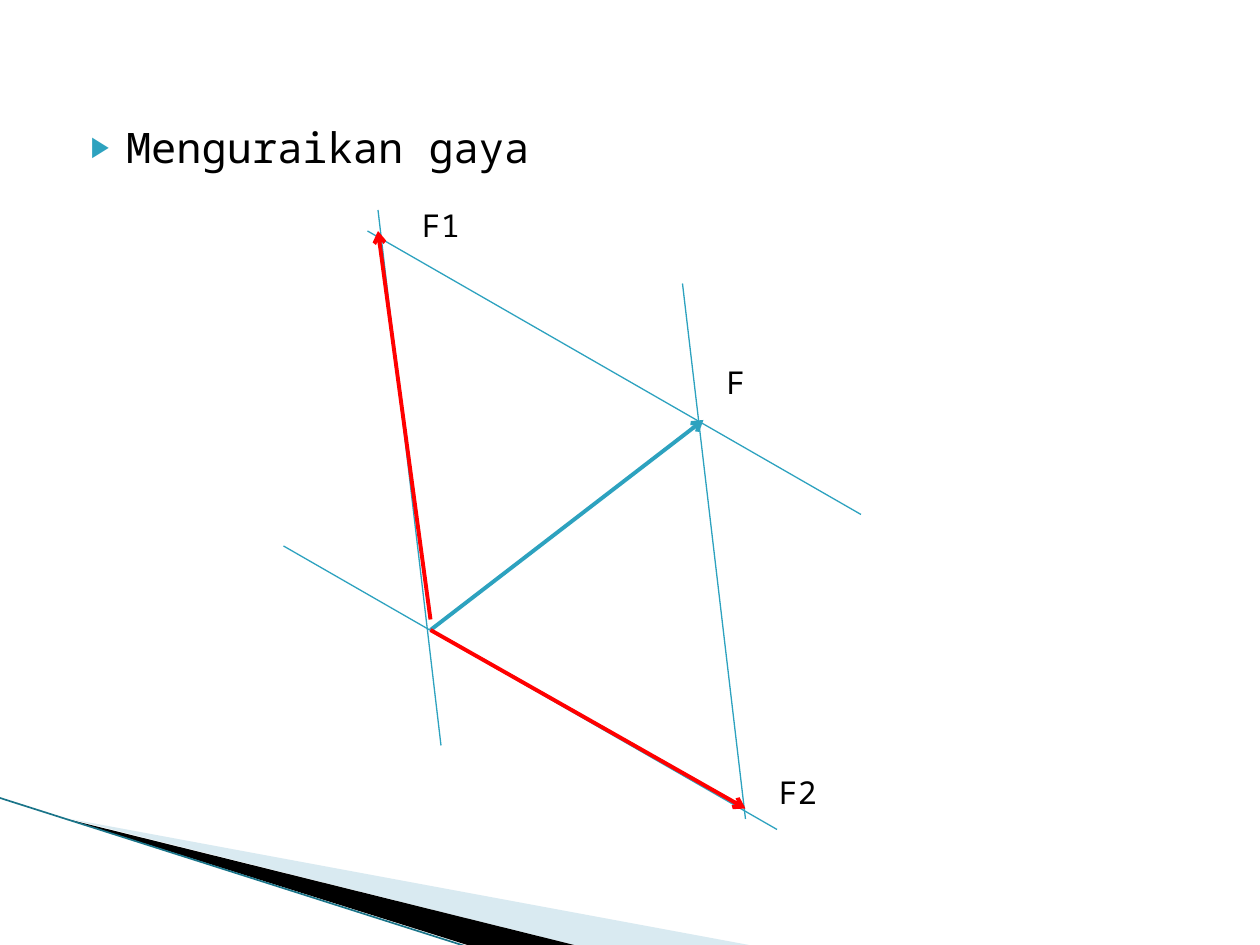
from lxml.etree import SubElement
from pptx import Presentation
from pptx.dml.color import RGBColor
from pptx.enum.shapes import MSO_CONNECTOR as CONN
from pptx.enum.text import MSO_AUTO_SIZE as AUTO, MSO_ANCHOR as ANCHOR, PP_ALIGN as ALIGN
from pptx.oxml.ns import qn
from pptx.util import Pt

FONT = "Noto Sans Mono"
COLORS = {"accent": "2DA2BF", "force": "FF0000", "text": "000000",
          "pale": "A0CBDC", "dark": "000000", "edge": "1A7489"}


def rgb(name):
    return RGBColor.from_string(COLORS[name])


def add_line(s, start, end, color, width, arrow=False):
    line = s.shapes.add_connector(CONN.STRAIGHT, *map(Pt, (*start, *end)))
    line.line.color.rgb = rgb(color)
    line.line.width = Pt(width)
    if arrow:
        SubElement(line.line._get_or_add_ln(), qn("a:tailEnd"), type="arrow")
    SubElement(line._element.spPr, qn("a:effectLst"))


def format_text(p, size):
    for r in p.runs:
        r.font.name = FONT
        r.font.size = Pt(size)
        r.font.color.rgb = rgb("text")


def add_wedge(s, points, color, alpha=None):
    builder = s.shapes.build_freeform(*points[0], scale=Pt(1))
    builder.add_line_segments(points[1:], close=True)
    sp = builder.convert_to_shape()
    sp.shadow.inherit = False
    sp.fill.solid()
    sp.fill.fore_color.rgb = rgb(color)
    sp.line.fill.background()
    if alpha:
        clr = sp._element.spPr.find(qn("a:solidFill"))[0]
        SubElement(clr, qn("a:alpha"), val=str(alpha * 1000))


def draw_corner(s, left, top):
    """Decorative wedges running off the bottom left corner."""
    def at(points):
        return [(left + x, top + y) for x, y in points]

    add_wedge(s, at([(39.6, 12.4), (428, 84), (328, 84)]), "pale", 40)
    add_wedge(s, at([(38, 11.5), (328, 84), (267, 84)]), "dark")
    add_line(s, *at([(0, 0), (267, 85)]), "edge", 0.95)


def fill_body(s, left, top, width, height):
    """Bulleted heading in the body placeholder."""
    body = s.placeholders[1]
    body.left, body.top, body.width, body.height = map(Pt, (left, top, width, height))
    tf = body.text_frame
    tf.text = "Menguraikan gaya"
    tf.vertical_anchor = ANCHOR.TOP
    p = tf.paragraphs[0]
    pPr = p._p.get_or_add_pPr()
    pPr.set("marL", str(Pt(28.8)))
    pPr.set("indent", str(Pt(-20.2)))
    clr = SubElement(pPr, qn("a:buClr"))
    SubElement(clr, qn("a:srgbClr"), val=COLORS["accent"])
    SubElement(pPr, qn("a:buSzPct"), val="68000")
    SubElement(pPr, qn("a:buChar"), char="▶")
    p.space_before = Pt(0)
    format_text(p, 24)


def add_label(s, text, x, y, width):
    tf = s.shapes.add_textbox(Pt(x), Pt(y), Pt(width), Pt(29)).text_frame
    tf.word_wrap = True
    tf.auto_size = AUTO.SHAPE_TO_FIT_TEXT
    tf.text = text
    tf.paragraphs[0].alignment = ALIGN.LEFT
    format_text(tf.paragraphs[0], 18)


def draw_forces(s, left, top):
    """Force F resolved into F1 and F2 along two pairs of parallels."""
    def at(x, y):
        return left + x, top + y

    # Resultant
    origin = at(84, 246)
    add_line(s, origin, at(240, 126), "accent", 2.25, arrow=True)

    # Guide pairs: one line and its parallel, moved by (dx, dy)
    guides = [((0, 198), (282, 360), (48, -180)),
              ((90, 312), (54, 6), (174, 42))]
    for (x1, y1), (x2, y2), shift in guides:
        for dx, dy in ((0, 0), shift):
            add_line(s, at(x1 + dx, y1 + dy), at(x2 + dx, y2 + dy), "accent", 0.75)

    # Components
    add_line(s, at(84, 240), at(54, 18), "force", 2.25, arrow=True)
    add_line(s, origin, at(264, 348), "force", 2.25, arrow=True)

    # Labels
    for text, x, y, width in (("F", 246, 90, 48), ("F1", 72, 0, 42), ("F2", 276, 324, 42)):
        add_label(s, text, *at(x, y), width)


def main():
    prs = Presentation()
    prs.slide_width, prs.slide_height = Pt(720), Pt(540)
    s = prs.slides.add_slide(prs.slide_layouts[1])
    title = s.shapes.title._element
    title.getparent().remove(title)
    draw_corner(s, 0, 456)
    fill_body(s, 36, 66, 648, 416)
    draw_forces(s, 162, 114)
    prs.save("out.pptx")


if __name__ == "__main__":
    main()
